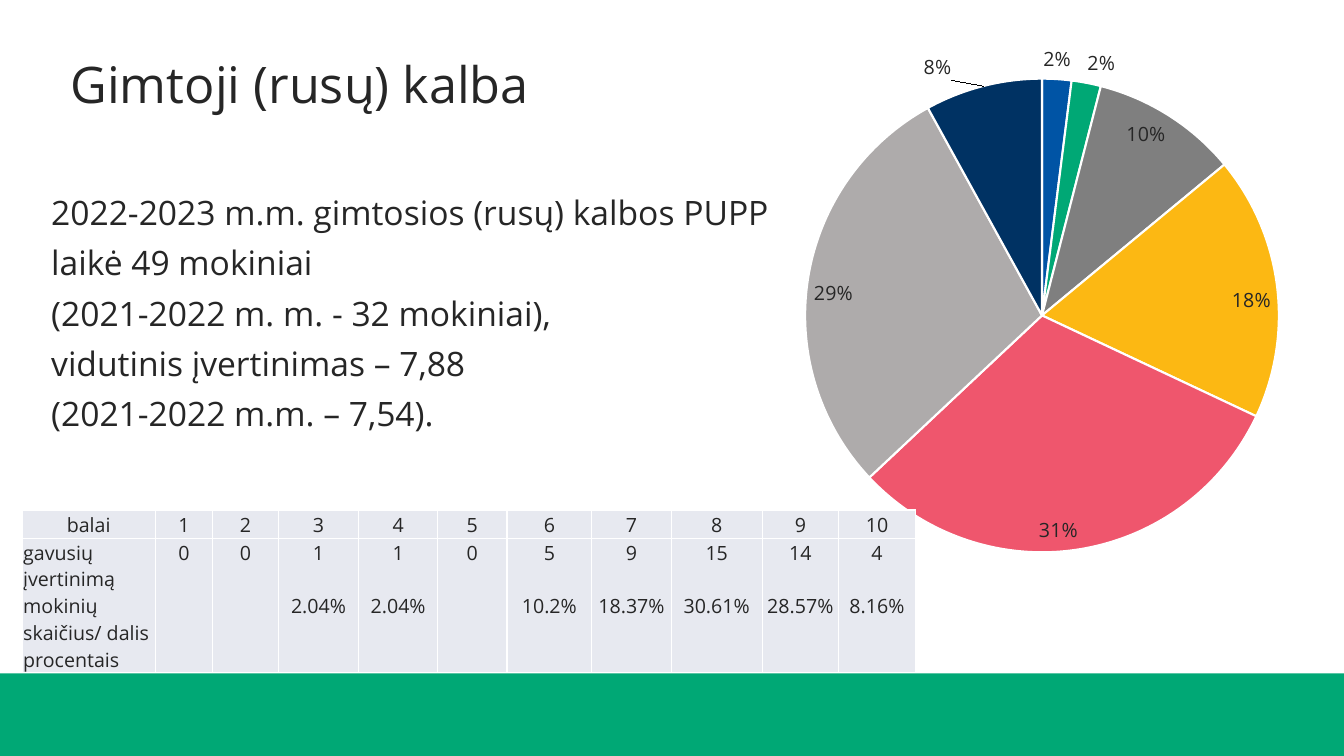
from dataclasses import dataclass

from lxml import etree
from pptx import Presentation
from pptx.chart.data import CategoryChartData
from pptx.dml.color import RGBColor
from pptx.enum.chart import XL_CHART_TYPE, XL_LABEL_POSITION
from pptx.enum.shapes import MSO_SHAPE
from pptx.enum.text import MSO_ANCHOR, PP_ALIGN
from pptx.oxml import parse_xml
from pptx.oxml.ns import nsdecls, qn
from pptx.util import Inches, Pt

PIE = XL_CHART_TYPE.PIE
OUT, IN = XL_LABEL_POSITION.OUTSIDE_END, XL_LABEL_POSITION.INSIDE_END
FIT = XL_LABEL_POSITION.BEST_FIT
RECT = MSO_SHAPE.RECTANGLE
TOP, LOW = MSO_ANCHOR.TOP, MSO_ANCHOR.BOTTOM
LEFT, MID = PP_ALIGN.LEFT, PP_ALIGN.CENTER


@dataclass(frozen=True)
class Theme:
    font: str = "Open Sans"
    ink: str = "262626"
    green: str = "00A875"
    cell: str = "E7E9F0"
    white: str = "FFFFFF"
    slices: tuple = ("0054A5", "00A875", "7F7F7F", "FCB813",
                     "EF566D", "AEABAB", "003263")
    head: int = 36
    body: int = 24
    small: int = 14


def tint(fill, color):
    fill.solid()
    fill.fore_color.rgb = RGBColor.from_string(color)


def style(font, look, size):
    font.name = look.font
    font.size = Pt(size)
    font.color.rgb = RGBColor.from_string(look.ink)


def put(frame, text, look, size, align=LEFT, anchor=TOP, space=1.0, gap=0):
    frame.word_wrap = True
    frame.vertical_anchor = anchor
    for i, line in enumerate(text.split("\n")):
        para = frame.paragraphs[0] if i == 0 else frame.add_paragraph()
        para.alignment = align
        para.line_spacing = space
        para.space_before = Pt(gap if i else 0)
        run = para.add_run()
        run.text = line
        style(run.font, look, size)


def layout(mode, **spots):
    parts = "".join(f'<c:{k} val="{v}"/>' for k, v in spots.items())
    return parse_xml(f'<c:layout {nsdecls("c")}><c:manualLayout>{mode}{parts}'
                     '</c:manualLayout></c:layout>')


class Deck:
    def __init__(self, look):
        self.look = look
        self.prs = Presentation()
        self.prs.slide_width = Inches(13.33)
        self.prs.slide_height = Inches(7.5)
        self.slide = self.prs.slides.add_slide(self.prs.slide_layouts[5])

    def title(self, text, *box):
        shape = self.slide.shapes.title
        shape.left, shape.top, shape.width, shape.height = map(Inches, box)
        put(shape.text_frame, text, self.look, self.look.head,
            anchor=LOW, space=0.9)

    def bar(self, *box):
        shape = self.slide.shapes.add_shape(RECT, *map(Inches, box))
        shape.shadow.inherit = False
        tint(shape.fill, self.look.green)
        shape.line.fill.background()

    def text(self, text, *box):
        shape = self.slide.shapes.add_textbox(*map(Inches, box))
        put(shape.text_frame, text, self.look, self.look.body,
            space=0.9, gap=10)

    def pie(self, values, outer, *box):
        look = self.look
        data = CategoryChartData()
        data.categories = [str(i + 1) for i in range(len(values))]
        data.add_series("Series 1", values)
        chart = self.slide.shapes.add_chart(
            PIE, *map(Inches, box), data).chart
        chart.has_title = chart.has_legend = False
        style(chart.font, look, look.small)
        plot = chart.plots[0]
        plot.vary_by_categories = True
        series = plot.series[0]
        labels = series.data_labels
        labels.show_percentage = True
        labels.show_value = False
        labels.position = FIT
        style(labels.font, look, look.small)
        for i, color in enumerate(look.slices):
            point = series.points[i]
            tint(point.format.fill, color)
            tint(point.format.line.fill, look.white)
            point.format.line.width = Pt(1.5)
            label = point.data_label
            style(label.font, look, look.small)
            label.position = OUT if i in outer else IN
        marks = list(chart.element.iter(qn("c:dLbl")))
        for mark in marks:
            mark.find(qn("c:showVal")).set("val", "0")
            mark.find(qn("c:showPercent")).set("val", "1")
        marks[-1].find(qn("c:idx")).addnext(layout("", x=-0.05, y=0))
        area = chart.element.find(".//" + qn("c:plotArea"))
        for old in area.findall(qn("c:layout")):
            area.remove(old)
        area.insert(0, layout(
            '<c:layoutTarget val="inner"/><c:xMode val="edge"/>'
            '<c:yMode val="edge"/>', x=0.1, y=0.09, w=0.8, h=0.88))

    def edge(self, cell):
        props = cell._tc.get_or_add_tcPr()
        for side in ("lnL", "lnR", "lnT", "lnB"):
            line = etree.SubElement(props, qn("a:" + side), w=str(Pt(1)))
            fill = etree.SubElement(line, qn("a:solidFill"))
            etree.SubElement(fill, qn("a:srgbClr"), val=self.look.white)

    def table(self, rows, cols, highs, left, top):
        look = self.look
        grid = self.slide.shapes.add_table(
            len(rows), len(cols), Inches(left), Inches(top),
            Inches(sum(cols)), Inches(sum(highs))).table
        grid.first_row = grid.horz_banding = False
        for col, wide in zip(grid.columns, cols):
            col.width = Inches(wide)
        for r, row in enumerate(rows):
            grid.rows[r].height = Inches(highs[r])
            for c, text in enumerate(row):
                cell = grid.cell(r, c)
                self.edge(cell)
                tint(cell.fill, look.cell)
                cell.margin_left = cell.margin_right = Inches(0.01)
                cell.margin_top, cell.margin_bottom = Inches(0.01), 0
                put(cell.text_frame, text, look, look.small,
                    align=LEFT if r and c == 0 else MID, gap=19)
                cell.vertical_anchor = TOP if c else LOW


def main():
    deck = Deck(Theme())
    deck.bar(0, 6.68, 13.33, 0.82)
    deck.text("2022-2023 m.m. gimtosios (rusų) kalbos PUPP\n"
              "laikė 49 mokiniai\n"
              "(2021-2022 m. m. - 32 mokiniai),\n"
              "vidutinis įvertinimas – 7,88\n"
              "(2021-2022 m.m. – 7,54).", 0.41, 1.9, 12.1, 2.6)
    deck.title("Gimtoji (rusų) kalba", 0.6, 0.3, 12.1, 0.89)
    deck.pie((2, 2, 10, 18, 31, 29, 8), (0, 1, 6), 7.34, 0.3, 5.99, 5.34)
    marks = ["balai"] + [str(n) for n in range(1, 11)]
    counts = ["gavusių įvertinimą mokinių skaičius/ dalis procentais",
              "0", "0", "1\n2.04%", "1\n2.04%", "0", "5\n10.2%",
              "9\n18.37%", "15\n30.61%", "14\n28.57%", "4\n8.16%"]
    cols = (1.32, 0.57, 0.65, 0.8, 0.78, 0.69, 0.84, 0.79, 0.9, 0.76, 0.76)
    deck.table((marks, counts), cols, (0.28, 1.33), 0.22, 5.06)
    deck.prs.save("out.pptx")


if __name__ == "__main__":
    main()
